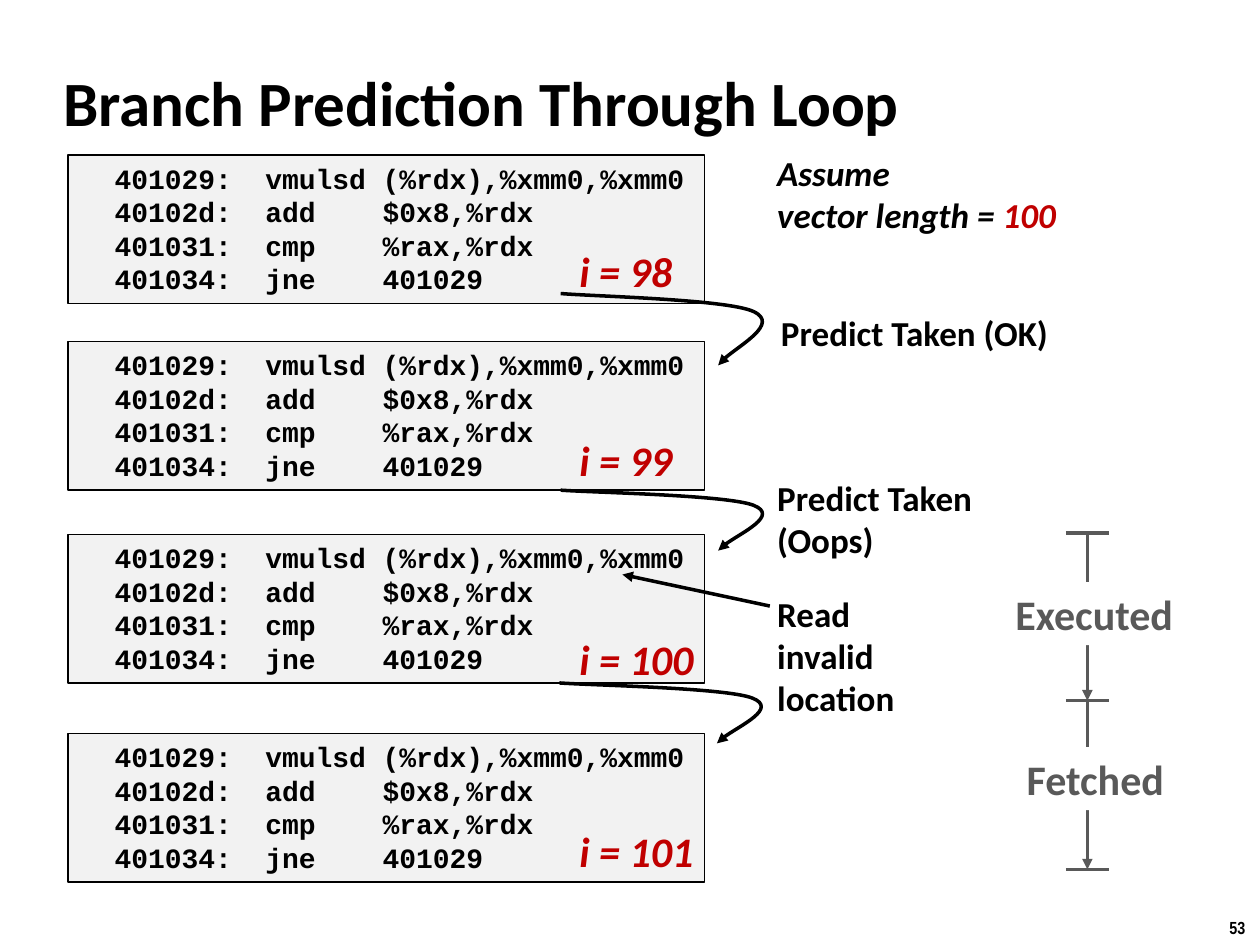
"""Build the slide on branch prediction through a loop."""
from lxml.etree import SubElement
from pptx import Presentation
from pptx.dml.color import RGBColor
from pptx.enum.shapes import MSO_CONNECTOR, MSO_SHAPE
from pptx.enum.text import MSO_ANCHOR, MSO_AUTO_SIZE, PP_ALIGN
from pptx.oxml.ns import qn
from pptx.util import Inches, Pt

BLACK, RED, GREY = "000000", "C00000", "595959"
CODE = [
    "401029:  vmulsd (%rdx),%xmm0,%xmm0",
    "40102d:  add    $0x8,%rdx",
    "401031:  cmp    %rax,%rdx",
    "401034:  jne    401029",
]


def write(shape, lines, size, color=BLACK, name="Calibri", italic=False, wrap=False):
    """Fill a shape with bold, left-aligned lines."""
    frame = shape.text_frame
    frame.text = "\n".join(lines)
    frame.word_wrap = wrap
    frame.auto_size = MSO_AUTO_SIZE.NONE
    for paragraph in frame.paragraphs:
        paragraph.alignment = PP_ALIGN.LEFT
        font = paragraph.font
        font.name, font.size, font.bold, font.italic = name, Pt(size), True, italic
        font.color.rgb = RGBColor.from_string(color)
    return frame


def stroke(shape, color, arrow=False):
    """Give a line its colour and width, no shadow, and an optional arrowhead."""
    shape.line.color.rgb = RGBColor.from_string(color)
    shape.line.width = Pt(2)
    properties = shape._element.spPr
    if arrow:
        SubElement(properties.find(qn("a:ln")), qn("a:tailEnd"), type="triangle")
    if properties.find(qn("a:effectLst")) is None:
        SubElement(properties, qn("a:effectLst"))


presentation = Presentation()
presentation.slide_width, presentation.slide_height = Inches(10), Inches(7.5)
slide = presentation.slides.add_slide(presentation.slide_layouts[5])
shapes = slide.shapes

title = shapes.title
title.left, title.top, title.width, title.height = map(Inches, (0.4, 0.49, 8.59, 0.63))
write(title, ["Branch Prediction Through Loop"], 36, wrap=True).vertical_anchor = MSO_ANCHOR.MIDDLE

for top in (1.23, 2.71, 4.24, 5.82):
    block = shapes.add_shape(MSO_SHAPE.RECTANGLE, *map(Inches, (0.54, top, 5.05, 1.18)))
    block.shadow.inherit = False
    block.fill.solid()
    block.fill.fore_color.rgb = RGBColor.from_string("F2F2F2")
    block.line.color.rgb = RGBColor.from_string(BLACK)
    block.line.width = Pt(0.75)
    frame = write(block, CODE, 16, name="Courier New", wrap=True)
    frame.margin_left, frame.margin_right = Inches(0.37), 0
    frame.vertical_anchor = MSO_ANCHOR.TOP

curve_points = [(0.26, 0.04), (1.32, 0.08), (1.53, 0.25), (1.74, 0.42), (1.31, 0.83), (1.25, 1)]
for left, top, height in ((4.45, 2.33, 0.57), (4.45, 3.89, 0.48), (4.44, 5.42, 0.48)):
    builder = shapes.build_freeform(Inches(left), Inches(top))
    builder.add_line_segments(
        [(Inches(left + x), Inches(top + y * height)) for x, y in curve_points], close=False)
    curve = builder.convert_to_shape()
    curve.fill.background()
    outline = next(curve._element.iter(qn("a:path")))
    segments = outline.findall(qn("a:lnTo"))
    for start in (0, 3):
        bezier = SubElement(outline, qn("a:cubicBezTo"))
        for segment in segments[start:start + 3]:
            bezier.append(segment[0])
            outline.remove(segment)
    stroke(curve, BLACK, arrow=True)

for index, top, width in ((98, 1.9, 0.94), (99, 3.4, 0.94), (100, 4.98, 1.11), (101, 6.5, 1.11)):
    counter = shapes.add_textbox(*map(Inches, (4.5, top, width, 0.5)))
    write(counter, [f"i = {index}"], 24, RED, italic=True)

notes = [
    (6.07, 1.15, 2.43, 0.77, ["Assume", "vector length = "]),
    (6.1, 2.42, 2.34, 0.44, ["Predict Taken (OK)"]),
    (6.07, 3.73, 1.76, 0.77, ["Predict Taken", "(Oops)"]),
    (6.07, 4.65, 1.42, 1.11, ["Read invalid location"]),
]
for *box, lines in notes:
    note = shapes.add_textbox(*map(Inches, box))
    assumption = lines[0] == "Assume"
    frame = write(note, lines, 20, italic=assumption, wrap=len(lines[0]) > 20)
    if assumption:
        run = frame.paragraphs[1].add_run()
        run.text = "100"
        run.font.color.rgb = RGBColor.from_string(RED)

axis, tick, marks = 8.63, 0.17, (4.23, 5.56, 6.9)
lines = [((6.11, 4.81, 4.94, 4.56), BLACK, True)]
lines += [((axis, start, axis, end), GREY, True) for start, end in zip(marks, marks[1:])]
lines += [((axis - tick, y, axis + tick, y), GREY, False) for y in marks]
for ends, color, arrow in lines:
    stroke(shapes.add_connector(MSO_CONNECTOR.STRAIGHT, *map(Inches, ends)), color, arrow)

for left, top, width, stage in ((7.96, 4.62, 1.47, "Executed"), (8.05, 5.93, 1.3, "Fetched")):
    label = shapes.add_textbox(*map(Inches, (left, top, width, 0.5)))
    label.fill.solid()
    label.fill.fore_color.rgb = RGBColor.from_string("FFFFFF")
    write(label, [stage], 24, GREY)

number = shapes.add_textbox(*map(Inches, (9.66, 7.23, 0.34, 0.27)))
write(number, ["53"], 10, name="Arial Narrow")

presentation.save("out.pptx")
